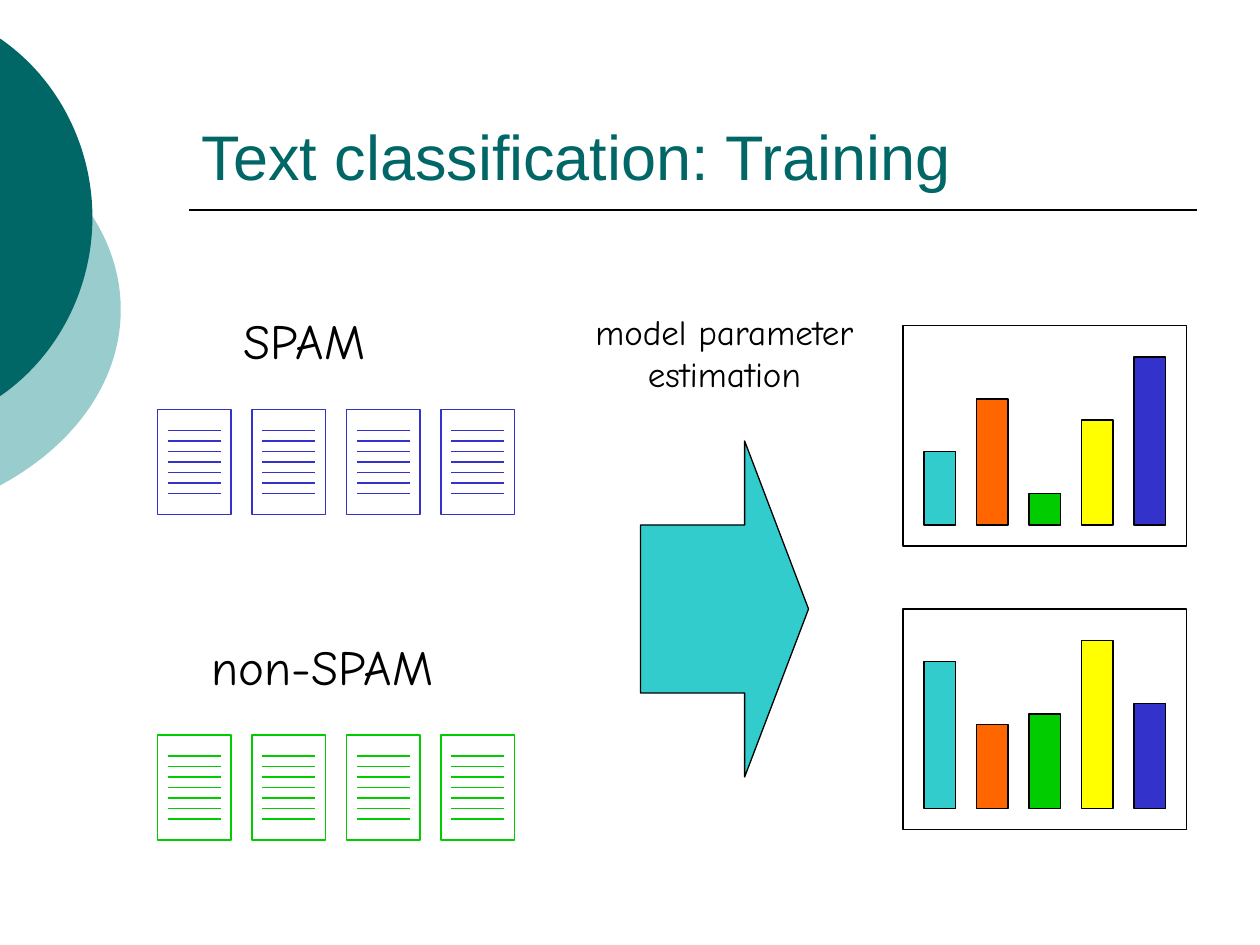
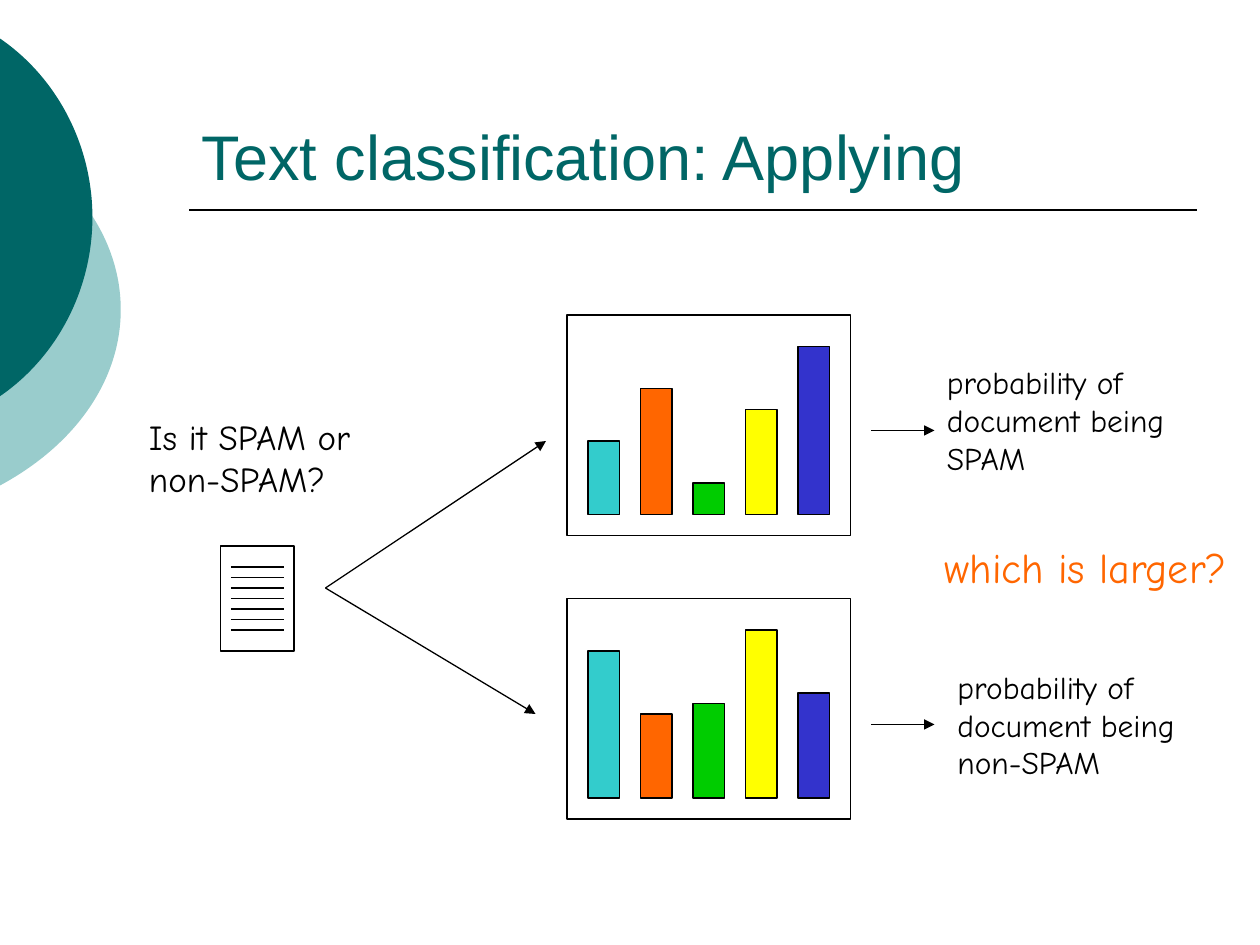
from dataclasses import dataclass
from typing import Optional, Union

from lxml.etree import SubElement
from pptx import Presentation
from pptx.dml.color import RGBColor
from pptx.enum.shapes import MSO_CONNECTOR, MSO_SHAPE
from pptx.enum.text import MSO_ANCHOR, MSO_AUTO_SIZE, PP_ALIGN
from pptx.oxml.ns import qn
from pptx.shapes.autoshape import Shape
from pptx.shapes.shapetree import GroupShapes, SlideShapes
from pptx.slide import Slide
from pptx.util import Cm, Length, Pt

# Shared look
BLACK = RGBColor(0x00, 0x00, 0x00)
TEAL = RGBColor(0x00, 0x66, 0x66)
PALE_TEAL = RGBColor(0x99, 0xCC, 0xCC)
TURQUOISE = RGBColor(0x33, 0xCC, 0xCC)
ORANGE = RGBColor(0xFF, 0x66, 0x00)
GREEN = RGBColor(0x00, 0xCC, 0x00)
YELLOW = RGBColor(0xFF, 0xFF, 0x00)
BLUE = RGBColor(0x33, 0x33, 0xCC)
BAR_COLOURS = (TURQUOISE, ORANGE, GREEN, YELLOW, BLUE)

TITLE_FONT = "Arial"
LABEL_FONT = "Comic Neue"
THIN = 0.75

Shapes = Union[SlideShapes, GroupShapes]
Point = tuple[float, float]


def grid(steps: float) -> Length:
    """Every position sits on a grid of twelve steps to 2.54 cm."""
    return Cm(steps * 2.54 / 12)


@dataclass(frozen=True)
class Disc:
    """Round band: the frame of the whole disc and the Bezier points of its visible
    side, from the top to the tip; the lower half mirrors the upper one."""
    colour: RGBColor
    left: float
    top: float
    width: float
    height: float
    curve: tuple[Point, Point, Point, Point]


@dataclass(frozen=True)
class Label:
    text: str
    left: float
    top: float
    width: float
    height: float
    size: int
    colour: RGBColor = BLACK
    align: PP_ALIGN = PP_ALIGN.LEFT


@dataclass(frozen=True)
class Document:
    left: float
    top: float
    colour: RGBColor = BLACK


@dataclass(frozen=True)
class Histogram:
    left: float
    top: float
    bar_heights: tuple[int, ...]


@dataclass(frozen=True)
class Arrow:
    start: Point
    end: Point


DISCS = (
    Disc(PALE_TEAL, -42.5, 9, 54, 41,
         ((-0.1, 12.7), (7.2, 16.6), (11.5, 22.8), (11.5, 29.5))),
    Disc(TEAL, -31.8, 0, 40.6, 41.4,
         ((-0.1, 3.6), (5.5, 7.4), (8.8, 13.9), (8.8, 20.7))),
)
SPAM_BARS = (7, 12, 3, 10, 16)
NON_SPAM_BARS = (14, 8, 9, 16, 10)
MODEL_GAP = 27


# Drawing helpers
def draw_disc(shapes: SlideShapes, disc: Disc) -> None:
    left, top = disc.left, disc.top
    right, bottom = left + disc.width, top + disc.height
    builder = shapes.build_freeform(grid(left), grid(top))
    builder.add_line_segments([(grid(x), grid(y)) for x, y in
                               ((right, top), (right, bottom), (left, bottom))])
    band = builder.convert_to_shape()
    band.shadow.inherit = False
    band.fill.solid()
    band.fill.fore_color.rgb = disc.colour
    band.line.fill.background()

    # Swap the straight frame for two curves
    outline = next(band.element.iter(qn("a:path")))
    for segment in list(outline):
        outline.remove(segment)
    middle = disc.curve[-1][1]
    mirrored = [(x, 2 * middle - y) for x, y in reversed(disc.curve[:-1])]
    for tag, points in (("a:moveTo", disc.curve[:1]),
                        ("a:cubicBezTo", disc.curve[1:]),
                        ("a:cubicBezTo", mirrored)):
        segment = SubElement(outline, qn(tag))
        for x, y in points:
            SubElement(segment, qn("a:pt"), x=str(grid(x - left)), y=str(grid(y - top)))
    SubElement(outline, qn("a:close"))


def draw_block(shapes: Shapes, left: float, top: float, width: float, height: float,
               fill: Optional[RGBColor] = None, line: RGBColor = BLACK,
               kind: MSO_SHAPE = MSO_SHAPE.RECTANGLE) -> Shape:
    block = shapes.add_shape(kind, grid(left), grid(top), grid(width), grid(height))
    block.shadow.inherit = False
    if fill is None:
        block.fill.background()
    else:
        block.fill.solid()
        block.fill.fore_color.rgb = fill
    block.line.color.rgb = line
    block.line.width = Pt(THIN)
    return block


def draw_line(shapes: Shapes, start: Point, end: Point, colour: RGBColor = BLACK,
              width: float = THIN, arrowhead: bool = False) -> None:
    line = shapes.add_connector(MSO_CONNECTOR.STRAIGHT, grid(start[0]), grid(start[1]),
                                grid(end[0]), grid(end[1]))
    line.line.color.rgb = colour
    line.line.width = Pt(width)
    properties = line.element.spPr
    if arrowhead:
        SubElement(properties.find(qn("a:ln")), qn("a:tailEnd"), type="triangle")
    SubElement(properties, qn("a:effectLst"))


def draw_label(slide: Slide, label: Label) -> None:
    box = slide.shapes.add_textbox(grid(label.left), grid(label.top),
                                   grid(label.width), grid(label.height))
    frame = box.text_frame
    frame.word_wrap = True
    frame.auto_size = MSO_AUTO_SIZE.SHAPE_TO_FIT_TEXT
    para = frame.paragraphs[0]
    para.alignment = label.align
    span = para.add_run()
    span.text = label.text
    span.font.name = LABEL_FONT
    span.font.size = Pt(label.size)
    span.font.color.rgb = label.colour


def draw_document(slide: Slide, document: Document) -> None:
    shapes = slide.shapes.add_group_shape().shapes
    left, top, colour = document.left, document.top, document.colour
    draw_block(shapes, left, top, 7, 10, line=colour)
    for row in range(2, 9):
        draw_line(shapes, (left + 1, top + row), (left + 6, top + row), colour)


def draw_histogram(slide: Slide, histogram: Histogram) -> None:
    shapes = slide.shapes.add_group_shape().shapes
    left, top = histogram.left, histogram.top
    for i, (height, colour) in enumerate(zip(histogram.bar_heights, BAR_COLOURS)):
        draw_block(shapes, left + 2 + 5 * i, top + 19 - height, 3, height, colour)
    draw_block(shapes, left, top, 27, 21)


def draw_models(slide: Slide, left: float, top: float) -> None:
    for i, heights in enumerate((SPAM_BARS, NON_SPAM_BARS)):
        draw_histogram(slide, Histogram(left, top + i * MODEL_GAP, heights))


def add_page(deck: Presentation, heading: str) -> Slide:
    page = deck.slides.add_slide(deck.slide_layouts.get_by_name("Title Only"))
    for disc in DISCS:
        draw_disc(page.shapes, disc)
    draw_line(page.shapes, (18, 20), (114, 20), width=1)

    title = page.shapes.title
    title.left, title.top, title.width, title.height = map(grid, (18, 4, 96, 15))
    title.text_frame.vertical_anchor = MSO_ANCHOR.BOTTOM
    para = title.text_frame.paragraphs[0]
    para.alignment = PP_ALIGN.LEFT
    span = para.add_run()
    span.text = heading
    span.font.name = TITLE_FONT
    span.font.size = Pt(36)
    span.font.color.rgb = TEAL
    return page


# Slides
def add_training(deck: Presentation) -> None:
    page = add_page(deck, "Text classification: Training")
    for top, colour in ((39, BLUE), (70, GREEN)):
        for column in range(4):
            draw_document(page, Document(15 + 9 * column, top, colour))

    estimation = draw_block(page.shapes, 61, 42, 16, 32, TURQUOISE,
                            kind=MSO_SHAPE.RIGHT_ARROW)
    estimation.adjustments[0] = 0.5
    estimation.adjustments[1] = 0.38

    for label in (
        Label("SPAM", 22, 29, 20, 6.8, 28),
        Label("non-SPAM", 19, 60, 25, 6.8, 28),
        Label("model parameter estimation", 54, 29, 30, 9.2, 20, align=PP_ALIGN.CENTER),
    ):
        draw_label(page, label)
    draw_models(page, 86, 31)


def add_applying(deck: Presentation) -> None:
    page = add_page(deck, "Text classification: Applying")
    draw_models(page, 54, 30)
    draw_document(page, Document(21, 52))

    for arrow in (
        Arrow((31, 56), (52, 42)),
        Arrow((31, 56), (51, 68)),
        Arrow((83, 41), (89, 41)),
        Arrow((83, 69), (89, 69)),
    ):
        draw_line(page.shapes, arrow.start, arrow.end, arrowhead=True)

    for label in (
        Label("Is it SPAM or non-SPAM?", 13, 39, 26, 9.2, 20),
        Label("probability of document being SPAM", 89, 34, 28, 12.1, 18),
        Label("probability of document being non-SPAM", 90, 63, 28, 12.1, 18),
        Label("which is larger?", 79, 51, 39, 6, 24, ORANGE, PP_ALIGN.RIGHT),
    ):
        draw_label(page, label)


def main() -> None:
    deck = Presentation()
    deck.slide_width, deck.slide_height = Cm(25.4), Cm(19.05)
    add_training(deck)
    add_applying(deck)
    deck.save("out.pptx")


if __name__ == "__main__":
    main()
